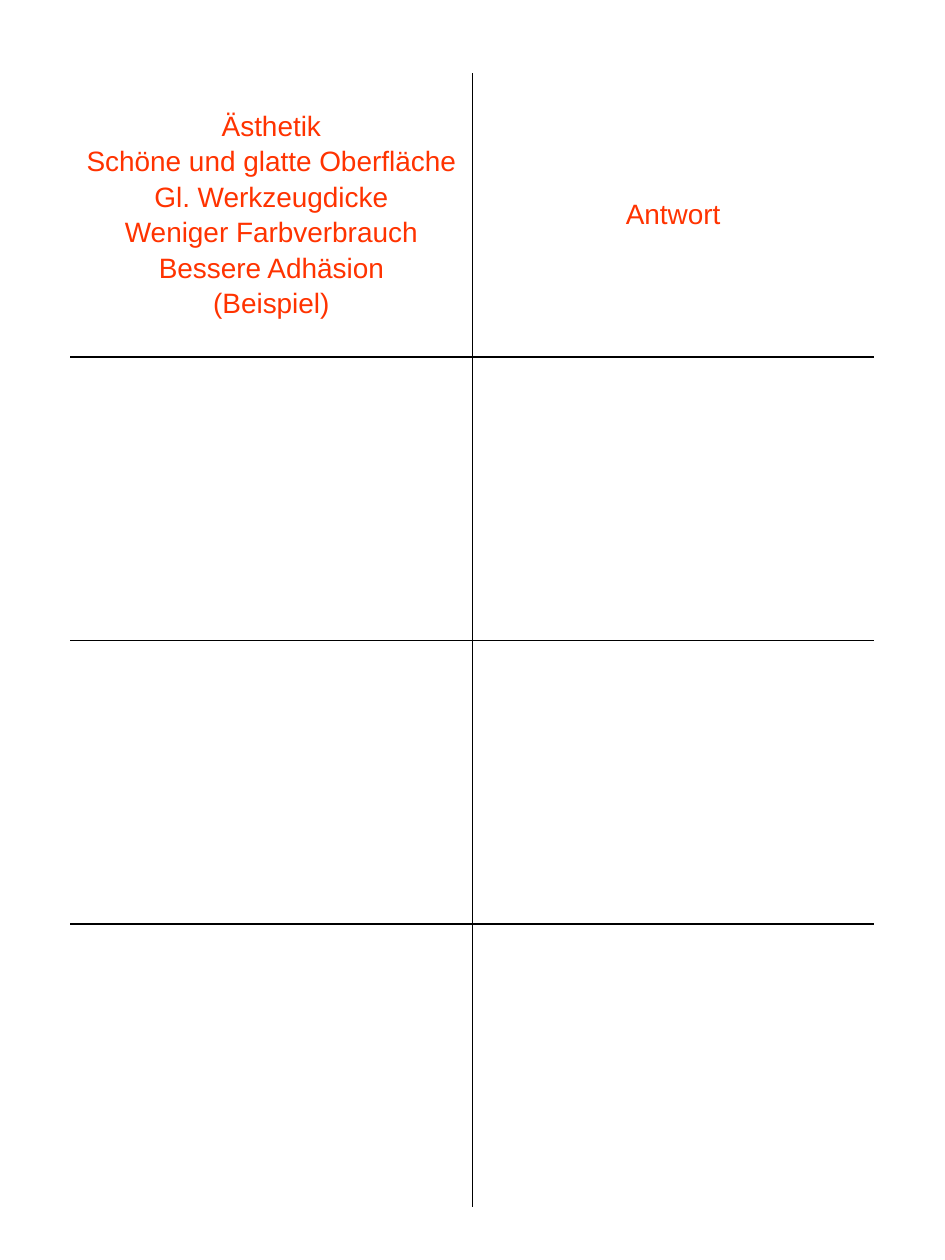
from lxml import etree
from pptx import Presentation
from pptx.dml.color import RGBColor
from pptx.enum.text import MSO_ANCHOR, PP_ALIGN
from pptx.oxml.ns import qn
from pptx.util import Cm, Pt

MIDDLE = MSO_ANCHOR.MIDDLE
CENTER = PP_ALIGN.CENTER
BLANK_LAYOUT = 6
COLORS = {"text": "FF3300", "rule": "000000"}
ROWS, COLUMNS = 4, 2
REASONS = [
    "Ästhetik",
    "Schöne und glatte Oberfläche",
    "Gl. Werkzeugdicke",
    "Weniger Farbverbrauch",
    "Bessere Adhäsion",
    "(Beispiel)",
]
CARDS = {(0, 0): REASONS, (0, 1): ["Antwort"]}


def set_borders(cell, ruled_sides):
    """Rule the given sides (of L, R, T, B) and leave the others clear."""
    properties = cell._tc.get_or_add_tcPr()
    for side in "LRTB":
        line = etree.SubElement(properties, qn(f"a:ln{side}"), w=str(Pt(1)))
        if side in ruled_sides:
            fill = etree.SubElement(line, qn("a:solidFill"))
            etree.SubElement(fill, qn("a:srgbClr"), val=COLORS["rule"])
        else:
            etree.SubElement(line, qn("a:noFill"))


def write_card(cell, lines):
    cell.text_frame.text = "\n".join(lines)
    for index, paragraph in enumerate(cell.text_frame.paragraphs):
        paragraph.alignment = CENTER
        if index:
            paragraph.space_before = Pt(2.5)
        for run in paragraph.runs:
            run.font.name = "Arial"
            run.font.size = Pt(16)
            run.font.color.rgb = RGBColor.from_string(COLORS["text"])


def add_card_grid(slide, left, top, width, height):
    """Add the cards with rules only between them, where they are cut."""
    grid = slide.shapes.add_table(ROWS, COLUMNS, left, top, width, height).table
    grid.first_row = False
    grid.horz_banding = False
    for row in range(ROWS):
        for column in range(COLUMNS):
            cell = grid.cell(row, column)
            has_neighbour = {
                "L": column > 0,
                "R": column < COLUMNS - 1,
                "T": row > 0,
                "B": row < ROWS - 1,
            }
            set_borders(cell, [side for side, inner in has_neighbour.items() if inner])
            cell.fill.background()
            cell.vertical_anchor = MIDDLE
            if (row, column) in CARDS:
                write_card(cell, CARDS[row, column])


def main():
    presentation = Presentation()
    presentation.slide_width = Cm(19.05)
    presentation.slide_height = Cm(25.4)
    slide = presentation.slides.add_slide(presentation.slide_layouts[BLANK_LAYOUT])
    add_card_grid(slide, Cm(1.42), Cm(1.48), Cm(16.2), Cm(22.86))
    presentation.save("out.pptx")


if __name__ == "__main__":
    main()
